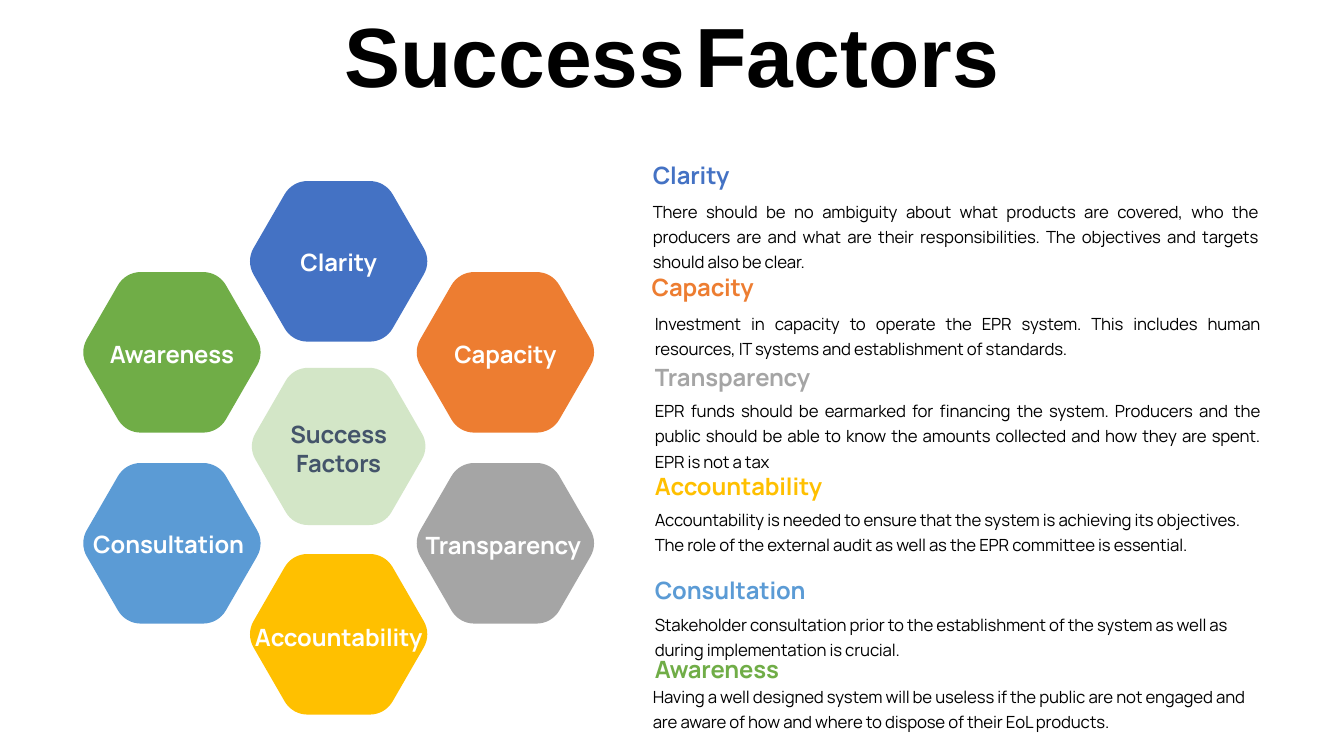
from math import cos, radians, sin, sqrt

from lxml import etree
from pptx import Presentation
from pptx.dml.color import RGBColor
from pptx.enum.text import MSO_ANCHOR, MSO_AUTO_SIZE, PP_ALIGN
from pptx.oxml.ns import qn
from pptx.util import Pt

LEFT, CENTER, JUSTIFY = PP_ALIGN.LEFT, PP_ALIGN.CENTER, PP_ALIGN.JUSTIFY
TOP, MIDDLE, BOTTOM = MSO_ANCHOR.TOP, MSO_ANCHOR.MIDDLE, MSO_ANCHOR.BOTTOM
GROW = MSO_AUTO_SIZE.SHAPE_TO_FIT_TEXT

BLACK = RGBColor(0x00, 0x00, 0x00)
WHITE = RGBColor(0xFF, 0xFF, 0xFF)
SLATE = RGBColor(0x44, 0x54, 0x6A)
BLUE = RGBColor(0x44, 0x72, 0xC4)
ORANGE = RGBColor(0xED, 0x7D, 0x31)
GRAY = RGBColor(0xA5, 0xA5, 0xA5)
GOLD = RGBColor(0xFF, 0xC0, 0x00)
SKY = RGBColor(0x5B, 0x9B, 0xD5)
GREEN = RGBColor(0x70, 0xAD, 0x47)

# Ring of hexagons: centre, column step, and vertical offsets
RING_X, RING_Y = 241.9, 319.9
COLUMN, SIDE, POLE = 119.1, 68.2, 133.2

# label, colour, hexagon offset, label shift, label width
HEXAGONS = [
    ("Awareness", GREEN, (-COLUMN, -SIDE), (0, 0.9), 111),
    ("Clarity", BLUE, (0, -POLE), (0, 0.1), 111),
    ("Capacity", ORANGE, (COLUMN, -SIDE), (0, 0.9), 111),
    ("Transparency ", GRAY, (COLUMN, SIDE), (0.2, 0.9), 136),
    ("Accountability", GOLD, (0, POLE), (0, 2.1), 146),
    ("Consultation ", SKY, (-COLUMN, SIDE), (-0.7, 0.5), 126),
]

# name, colour, heading left and top, text left and top, alignment, text
FACTORS = [
    ("Clarity", BLUE, (459.2, 110.9), (459.2, 137), JUSTIFY,
     "There should be no ambiguity about what products are covered, who the "
     "producers are and what are their responsibilities. The objectives and "
     "targets should also be clear."),
    ("Capacity", ORANGE, (458.4, 190.8), (460.6, 216.7), JUSTIFY,
     "Investment in capacity to operate the EPR system. This includes human "
     "resources, IT systems and establishment of standards."),
    ("Transparency", GRAY, (460.6, 254.9), (460.6, 279.2), JUSTIFY,
     "EPR funds should be earmarked for financing the system. Producers and "
     "the public should be able to know the amounts collected and how they "
     "are spent. EPR is not a tax"),
    ("Accountability", GOLD, (460.6, 332.6), (460.6, 356.8), LEFT,
     "Accountability is needed to ensure that the system is achieving its "
     "objectives. The role of the external audit as well as the EPR "
     "committee is essential."),
    ("Consultation", SKY, (460.6, 407.1), (460.6, 432), LEFT,
     "Stakeholder consultation prior to the establishment of the system as "
     "well as during implementation is crucial."),
    ("Awareness", GREEN, (460.6, 463.7), (459.2, 483.1), LEFT,
     "Having a well designed system will be useless if the public are not "
     "engaged and are aware of how and where to dispose of their EoL "
     "products."),
]


def add_span(para, text, *, size=17, font="Manrope", color=BLACK,
             bold=False, spacing=-0.1):
    span = para.add_run()
    span.text = text
    span.font.size = Pt(size)
    span.font.name = font
    span.font.bold = bold
    span.font.color.rgb = color
    span._r.get_or_add_rPr().set("spc", str(round(spacing * 100)))


class SlidePainter:
    """Holds the current slide and the style of its elements."""

    column_width = 447.1
    heading_height = 28.1
    body_height = 42.5
    corner_cut = 0.164  # share of a hexagon side taken by its rounding
    curve_pull = 0.62   # makes a 60 degree curve circular

    def __init__(self, page):
        self.page = page

    def para(self, left, top, width, height, anchor=TOP, align=LEFT):
        box = self.page.shapes.add_textbox(
            Pt(left), Pt(top), Pt(width), Pt(height))
        frame = box.text_frame
        frame.word_wrap = True
        frame.auto_size = GROW
        frame.vertical_anchor = anchor
        para = frame.paragraphs[0]
        para.alignment = align
        return para

    def title(self, *words):
        para = self.para(59.8, -2.2, 840.2, 79.9, BOTTOM, CENTER)
        for index, word in enumerate(words):
            if index:
                add_span(para, " ", size=37, color=SLATE, spacing=-1.4)
            add_span(para, word, size=60, font="Arial", bold=True, spacing=0)

    def heading(self, left, top, text, color):
        para = self.para(left, top, self.column_width, self.heading_height,
                         BOTTOM)
        add_span(para, text, color=color, bold=True)

    def body(self, left, top, text, align):
        para = self.para(left, top, self.column_width, self.body_height,
                         align=align)
        para.line_spacing = Pt(18)
        add_span(para, text, size=12)

    def label(self, x, y, width, height, text, color=WHITE):
        para = self.para(x - width / 2, y - height / 2, width, height,
                         MIDDLE, CENTER)
        add_span(para, text, color=color, bold=True)

    def hexagon(self, x, y, height, color, opacity=None):
        radius = height / sqrt(3)
        corners = [(x + radius * cos(radians(angle)),
                    y + radius * sin(radians(angle)))
                   for angle in range(0, 360, 60)]

        def toward(start, end, share):
            return tuple(Pt(a + (b - a) * share) for a, b in zip(start, end))

        # Per corner: curve start, two control points, curve end
        cut = self.corner_cut
        near = cut * (1 - self.curve_pull)
        points = []
        for index, corner in enumerate(corners):
            before, after = corners[index - 1], corners[(index + 1) % 6]
            points += [toward(corner, before, cut),
                       toward(corner, before, near),
                       toward(corner, after, near),
                       toward(corner, after, cut)]
        builder = self.page.shapes.build_freeform(*points[0])
        builder.add_line_segments(points[1:], close=True)
        shape = builder.convert_to_shape()
        self.round_corners(shape)
        shape.shadow.inherit = False
        shape.line.fill.background()
        shape.fill.solid()
        shape.fill.fore_color.rgb = color
        if opacity is not None:
            tint = shape._element.spPr.find(
                qn("a:solidFill") + "/" + qn("a:srgbClr"))
            etree.SubElement(tint, qn("a:alpha"), val=str(opacity * 1000))

    def round_corners(self, shape):
        # Three segments of every four become one Bézier curve
        segments = list(shape._element.iter(qn("a:lnTo")))
        for first in range(0, len(segments), 4):
            trio = segments[first:first + 3]
            curve = etree.Element(qn("a:cubicBezTo"))
            trio[0].addprevious(curve)
            for segment in trio:
                curve.append(segment[0])
                segment.getparent().remove(segment)


def main():
    deck = Presentation()
    deck.slide_width, deck.slide_height = Pt(960), Pt(540)
    page = deck.slides.add_slide(deck.slide_layouts[6])
    painter = SlidePainter(page)

    # Hexagons
    painter.hexagon(RING_X, RING_Y - 1, 112.3, GREEN, opacity=30)
    for name, color, (dx, dy), shift, width in HEXAGONS:
        painter.hexagon(RING_X + dx, RING_Y + dy, 114.7, color)

    # Title
    painter.title("Success", "Factors")

    # Explanations
    for name, color, heading_at, body_at, align, text in FACTORS:
        painter.heading(*heading_at, name, color)
        painter.body(*body_at, text, align)

    # Hexagon labels
    for name, color, (dx, dy), (right, down), width in HEXAGONS:
        painter.label(RING_X + dx + right, RING_Y + dy + down, width, 28.1,
                      name)
    painter.label(RING_X, RING_Y + 0.3, 97.9, 48.2, "Success Factors", SLATE)

    deck.save("out.pptx")


if __name__ == "__main__":
    main()
